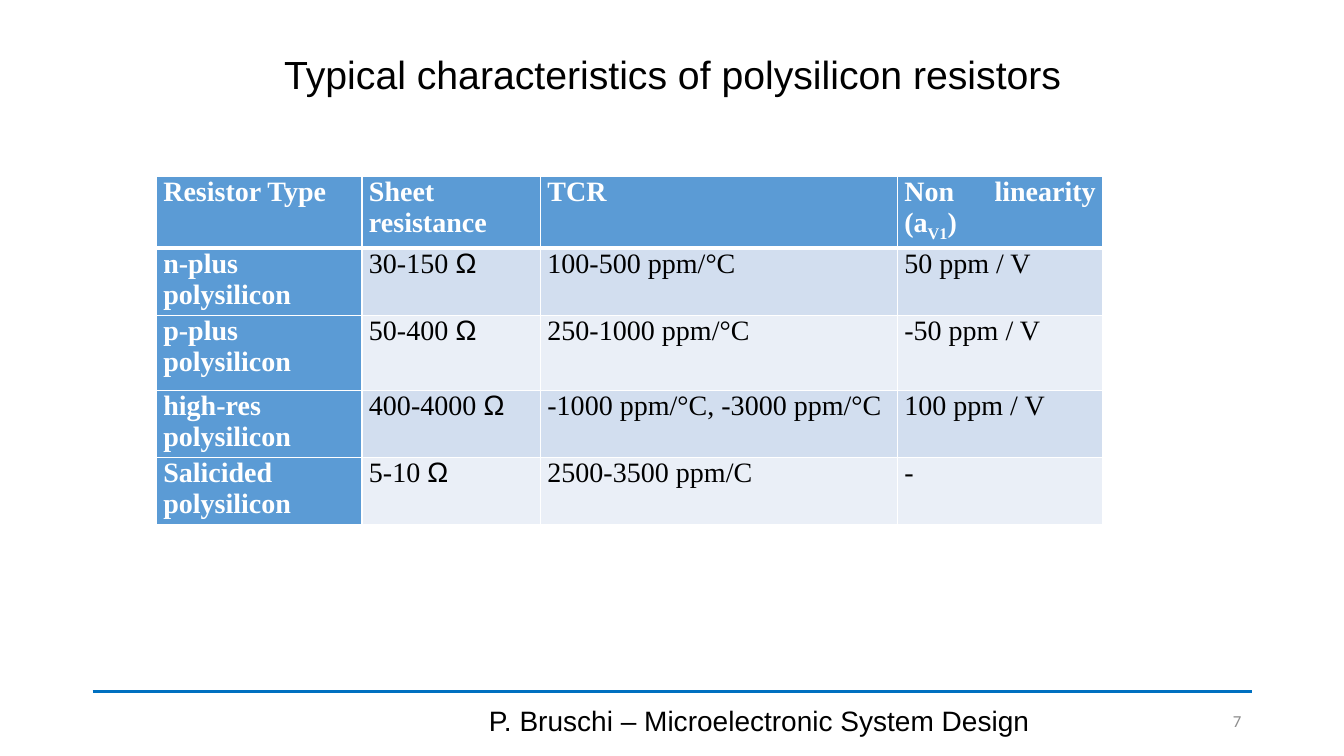
"""Build the slide on typical characteristics of polysilicon resistors."""
import pptx
import pptx.dml.color
import pptx.enum.shapes
import pptx.enum.text
import pptx.oxml
import pptx.oxml.ns
import pptx.util

ALIGN = pptx.enum.text.PP_ALIGN
ANCHOR = pptx.enum.text.MSO_ANCHOR
PX = 9144
SIZE = (1333, 750)
RULE = (92, 686, 1242, 686)
LABELS = [
    ("Typical characteristics of polysilicon resistors",
     (92, 40, 1150, 72), 28, "Arial", "000000", ALIGN.CENTER, 0.9),
    ("P. Bruschi – Microelectronic System Design",
     (442, 695, 622, 40), 20, "Arial", "000000", ALIGN.CENTER, 1.0),
    ("7", (1145, 695, 96, 40), 12, "Calibri", "8C8C8C", ALIGN.RIGHT, 1.0),
]
ROWS = [
    [["Resistor Type"], ["Sheet resistance "], ["TCR "],
     ["Non linearity (a", "V1", ")"]],
    [["n-plus polysilicon"], ["30-150 ", "Ω"], ["100-500 ppm/°C"],
     ["50 ppm / V"]],
    [["p-plus polysilicon"], ["50-400 ", "Ω"], ["250-1000 ppm/°C"],
     ["-50 ppm / V"]],
    [["high-res polysilicon"], ["400-4000 ", "Ω"],
     ["-1000 ppm/°C, -3000 ppm/°C "], ["100 ppm / V"]],
    [["Salicided polysilicon"], ["5-10 ", "Ω"], ["2500-3500 ppm/C"], ["-"]],
]
LEFT, TOP = 155, 175
WIDTHS = [204, 177, 354, 204]
HEIGHTS = [52, 52, 74, 52, 52]
HEAD, BANDS = "5B9BD5", ("EAEFF7", "D2DEEF")
WHITE, BLACK = "FFFFFF", "000000"


def px(*nums):
    """Turn pixel lengths into EMU."""
    return [pptx.util.Emu(num * PX) for num in nums]


def tint(color):
    """Turn a hex string into a colour."""
    return pptx.dml.color.RGBColor.from_string(color)


def write(para, text, size, face, color, bold=False):
    """Add one styled run to a paragraph."""
    run = para.add_run()
    run.text = text
    font = run.font
    font.size, font.name, font.bold = pptx.util.Pt(size), face, bold
    font.color.rgb = tint(color)
    return run


def label(slide, text, box, size, face, color, align, space):
    """Add one line of text, centred in height."""
    frame = slide.shapes.add_textbox(*px(*box)).text_frame
    frame.word_wrap = True
    frame.vertical_anchor = ANCHOR.MIDDLE
    para = frame.paragraphs[0]
    para.alignment, para.line_spacing = align, space
    write(para, text, size, face, color)


def edge(cell, row):
    """Draw white cell borders, thick below the header."""
    props = cell._tc.get_or_add_tcPr()
    thick = {"T": row == 1, "B": row == 0}
    for spot, side in enumerate("LRTB"):
        width = pptx.util.Pt(3 if thick.get(side) else 1)
        line = pptx.oxml.parse_xml(
            f'<a:ln{side} {pptx.oxml.ns.nsdecls("a")} w="{width}"><a:solidFill>'
            f'<a:srgbClr val="{WHITE}"/></a:solidFill></a:ln{side}>')
        props.insert(spot, line)


def fill(cell, runs, row, col):
    """Style one table cell and write its runs."""
    head = row == 0 or col == 0
    cell.margin_left, cell.margin_right = px(7, 7)
    cell.margin_top = cell.margin_bottom = 0
    cell.fill.solid()
    cell.fill.fore_color.rgb = tint(HEAD if head else BANDS[row % 2])
    edge(cell, row)
    para = cell.text_frame.paragraphs[0]
    para.alignment = ALIGN.JUSTIFY
    para.space_after = pptx.util.Pt(6)
    for text in runs:
        face = "Arial" if text == "Ω" else "Times New Roman"
        run = write(para, text, 20, face, WHITE if head else BLACK, head)
        if text == "V1":
            run._r.get_or_add_rPr().set("baseline", "-25000")


def main():
    """Build and save the slide."""
    deck = pptx.Presentation()
    deck.slide_width, deck.slide_height = px(*SIZE)
    slide = deck.slides.add_slide(deck.slide_layouts[6])

    kind = pptx.enum.shapes.MSO_CONNECTOR.STRAIGHT
    rule = slide.shapes.add_connector(kind, *px(*RULE))
    rule.line.color.rgb = tint("0070C0")
    rule.line.width = pptx.util.Pt(2.75)
    rule._element.spPr.append(pptx.oxml.parse_xml(
        f'<a:effectLst {pptx.oxml.ns.nsdecls("a")}/>'))

    for item in LABELS:
        label(slide, *item)

    box = px(LEFT, TOP, sum(WIDTHS), sum(HEIGHTS))
    table = slide.shapes.add_table(len(ROWS), len(WIDTHS), *box).table
    table.first_col = True
    for col, width in zip(table.columns, px(*WIDTHS)):
        col.width = width
    for row, height in zip(table.rows, px(*HEIGHTS)):
        row.height = height
    for row, cells in enumerate(ROWS):
        for col, runs in enumerate(cells):
            fill(table.cell(row, col), runs, row, col)

    deck.save("out.pptx")


if __name__ == "__main__":
    main()
